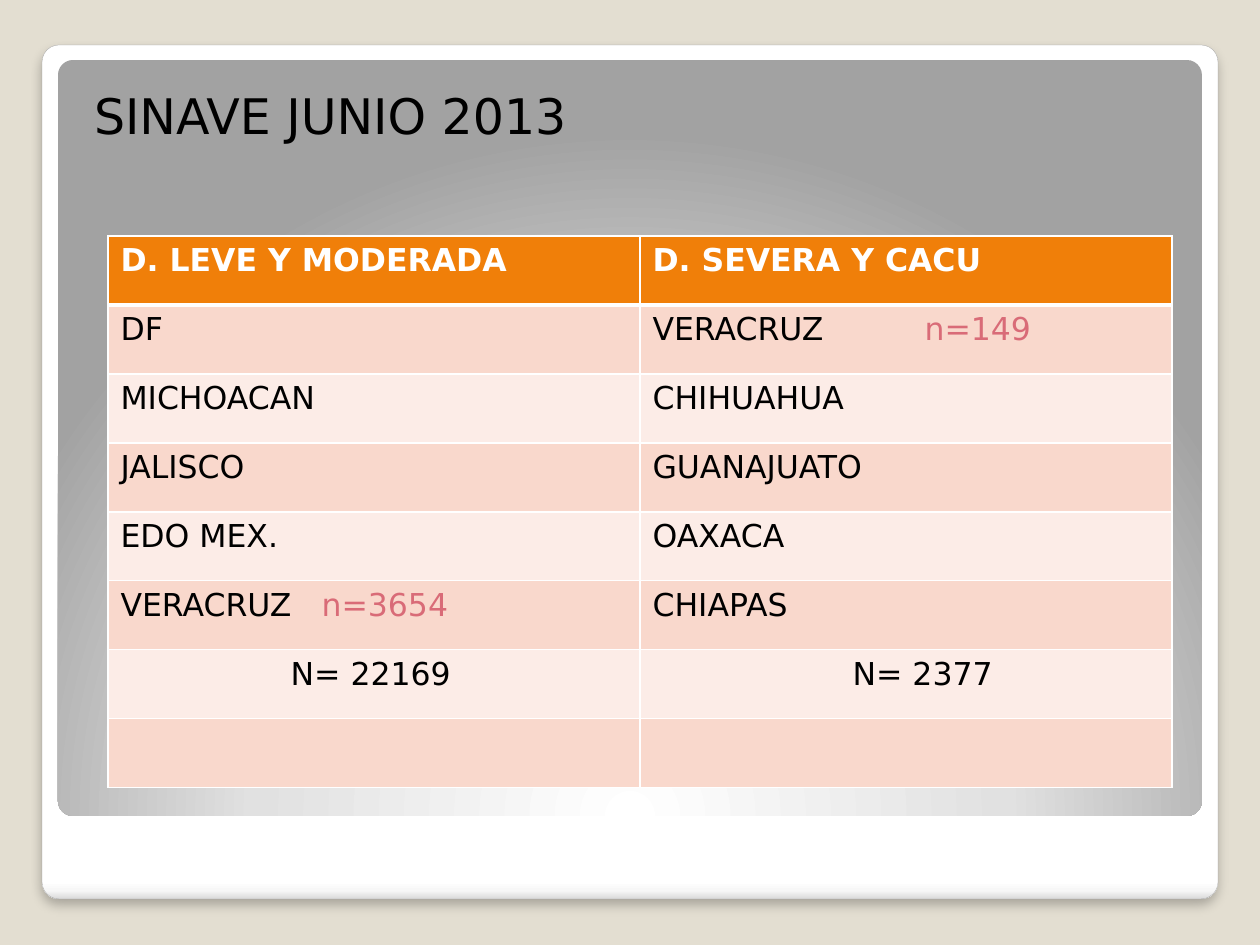
from lxml import etree
from pptx import Presentation
from pptx.dml.color import RGBColor
from pptx.enum.shapes import MSO_SHAPE as SHAPE
from pptx.oxml import parse_xml
from pptx.oxml.ns import nsdecls, qn
from pptx.util import Pt

PX = 914400 / 126
FONT = "DejaVu Sans"
BACKGROUND = RGBColor(0xE3, 0xDE, 0xD1)
EDGE = RGBColor(0xA4, 0xA4, 0xA4)
BLACK = RGBColor(0, 0, 0)
WHITE = RGBColor(0xFF, 0xFF, 0xFF)
ORANGE = RGBColor(0xF0, 0x7F, 0x09)
PINK = RGBColor(0xF9, 0xD8, 0xCC)
PALE = RGBColor(0xFC, 0xEC, 0xE7)
ROSE = RGBColor(0xD9, 0x6B, 0x77)

FRAME_STOPS = [(0, "FFFFFF"), (98, "FFFFFF"), (99, "F7F7F7"), (100, "DADADA")]
PANEL_STOPS = [(0, "FFFFFF"), (55, "E1E1E1"), (100, "A2A2A2")]
DOWNWARD = '<a:lin ang="5400000" scaled="0"/>'
FROM_BELOW = ('<a:path path="circle"><a:fillToRect l="50000" t="175000" '
              'r="50000" b="-75000"/></a:path>')

HEADERS = ["D. LEVE Y MODERADA", "D. SEVERA Y CACU"]
STATES = [
    ("DF", "VERACRUZ"),
    ("MICHOACAN", "CHIHUAHUA"),
    ("JALISCO", "GUANAJUATO"),
    ("EDO MEX.", "OAXACA"),
    ("VERACRUZ", "CHIAPAS"),
]
COUNTS = {(1, 1): ("n=149", 272), (5, 0): ("n=3654", 201)}
TOTALS = [("N= 22169", 170), ("N= 2377", 200)]


def px(n):
    """Turn pixels into EMU."""
    return round(n * PX)


def add_run(p, text, **values):
    """Add a run with the given font values."""
    r = p.add_run()
    r.text = text
    color = values.pop("color", BLACK)
    for name, value in {"name": FONT, "size": Pt(18), "bold": False, **values}.items():
        setattr(r.font, name, value)
    r.font.color.rgb = color


def add_panel(slide, box, stops, direction):
    """Place a rounded panel with a gradient fill."""
    sp = slide.shapes.add_shape(SHAPE.ROUNDED_RECTANGLE, *map(px, box))
    sp.adjustments[0] = 0.02
    sp.shadow.inherit = False
    sp.line.fill.background()
    marks = "".join(f'<a:gs pos="{pos * 1000}"><a:srgbClr val="{color}"/></a:gs>'
                    for pos, color in stops)
    fill = parse_xml(f'<a:gradFill {nsdecls("a")} rotWithShape="1">'
                     f'<a:gsLst>{marks}</a:gsLst>{direction}</a:gradFill>')
    sp._element.spPr.find(qn("a:prstGeom")).addnext(fill)
    return sp


def add_frame(slide, box):
    """Place the white frame with its thin edge and soft shadow."""
    sp = add_panel(slide, box, FRAME_STOPS, DOWNWARD)
    sp.line.color.rgb = EDGE
    sp.line.width = Pt(0.16)
    sp._element.spPr.find(qn("a:effectLst")).append(parse_xml(
        f'<a:outerShdw {nsdecls("a")} blurRad="{Pt(6)}" dist="{Pt(4)}" dir="5400000" '
        'algn="t" rotWithShape="0"><a:srgbClr val="000000"><a:alpha val="25000"/>'
        '</a:srgbClr></a:outerShdw>'))


def add_title(slide, box, text):
    """Place the slide heading."""
    tf = slide.shapes.add_textbox(*map(px, box)).text_frame
    margins = {"margin_left": 25, "margin_top": 13, "margin_right": 13, "margin_bottom": 6}
    for name, value in margins.items():
        setattr(tf, name, px(value))
    tf.word_wrap = True
    p = tf.paragraphs[0]
    p.space_before = Pt(2.5)
    add_run(p, text, size=Pt(28))


def add_borders(cell, top, bottom):
    """Draw white borders around a cell, with widths in points."""
    tc_pr = cell._tc.get_or_add_tcPr()
    for i, (side, width) in enumerate(zip("LRTB", (1, 1, top, bottom))):
        tc_pr.insert(i, parse_xml(
            f'<a:ln{side} {nsdecls("a")} w="{Pt(width)}"><a:solidFill>'
            f'<a:srgbClr val="{WHITE}"/></a:solidFill></a:ln{side}>'))


def add_tab_stop(p, offset):
    """Set a left tab stop on a paragraph."""
    tabs = etree.SubElement(p._p.get_or_add_pPr(), qn("a:tabLst"))
    etree.SubElement(tabs, qn("a:tab"), pos=str(px(offset)), algn="l")


def fill_cell(cell, row, col):
    """Write one cell's text."""
    p = cell.text_frame.paragraphs[0]
    if row == 0:
        add_run(p, HEADERS[col], bold=True, color=WHITE)
    elif row <= len(STATES):
        add_run(p, STATES[row - 1][col])
        if (row, col) in COUNTS:
            count, offset = COUNTS[row, col]
            add_tab_stop(p, offset)
            add_run(p, "\t" + count, color=ROSE)
    elif row == len(STATES) + 1:
        total, indent = TOTALS[col]
        p._p.get_or_add_pPr().set("marL", str(px(indent)))
        add_run(p, total)


def add_state_table(slide, box):
    """Place the table of states, with an empty last row."""
    rows, cols = len(STATES) + 3, len(HEADERS)
    table = slide.shapes.add_table(rows, cols, *map(px, box)).table
    table.first_row = table.horz_banding = False
    for column in table.columns:
        column.width = px(box[2] / cols)
    for i, row in enumerate(table.rows):
        row.height = px(box[3] / rows)
        for j, cell in enumerate(row.cells):
            cell.fill.solid()
            cell.fill.fore_color.rgb = ORANGE if i == 0 else PINK if i % 2 else PALE
            add_borders(cell, 3 if i == 1 else 1, 3 if i == 0 else 1)
            fill_cell(cell, i, j)


def main():
    """Build the slide and save it."""
    prs = Presentation()
    prs.slide_width, prs.slide_height = px(1260), px(945)
    slide = prs.slides.add_slide(prs.slide_layouts[6])
    slide.background.fill.solid()
    slide.background.fill.fore_color.rgb = BACKGROUND
    add_frame(slide, (42, 45, 1176, 854))
    add_panel(slide, (58, 60, 1144, 756), PANEL_STOPS, FROM_BELOW)
    add_title(slide, (69, 73, 1128, 577), "SINAVE JUNIO 2013")
    add_state_table(slide, (108, 236, 1064, 552))
    prs.save("out.pptx")


if __name__ == "__main__":
    main()
